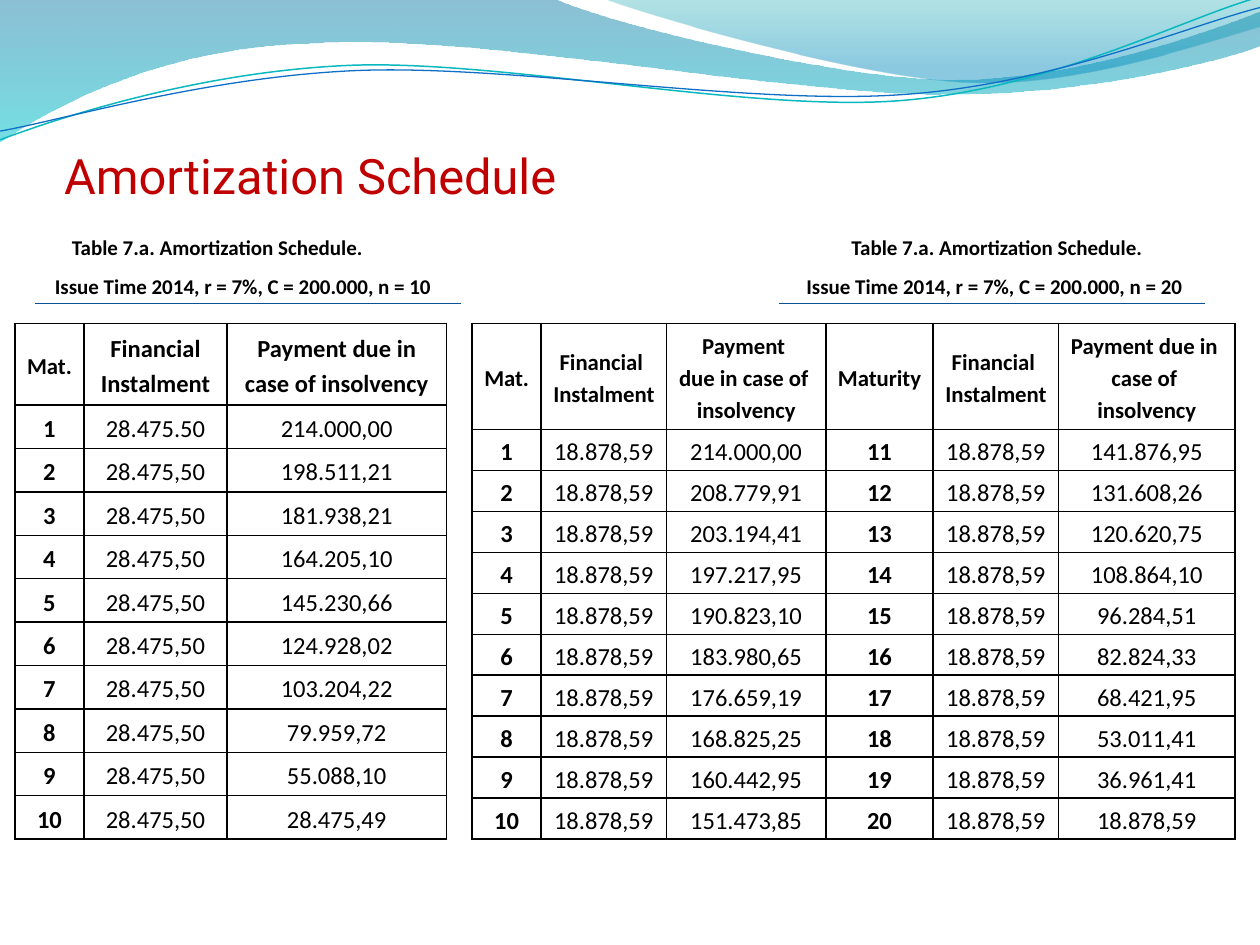
from lxml import etree
from pptx import Presentation
from pptx.dml.color import RGBColor
from pptx.enum.shapes import MSO_CONNECTOR
from pptx.enum.text import MSO_ANCHOR, PP_ALIGN
from pptx.oxml.ns import qn
from pptx.util import Pt

STRAIGHT = MSO_CONNECTOR.STRAIGHT
MIDDLE, BOTTOM = MSO_ANCHOR.MIDDLE, MSO_ANCHOR.BOTTOM
CENTER = PP_ALIGN.CENTER

BLACK = RGBColor(0x00, 0x00, 0x00)
RED = RGBColor(0xC0, 0x00, 0x00)
RULE_BLUE = RGBColor(0x09, 0x52, 0x95)
WAVE_BLUE = RGBColor(0x00, 0x74, 0xA1)
WAVE_CYAN = RGBColor(0x00, 0xC6, 0xCF)
WAVE_TEAL = RGBColor(0x00, 0xA1, 0xA9)
WAVE_SKY = RGBColor(0x00, 0x8B, 0xBF)
LINE_TEAL = RGBColor(0x0A, 0xB8, 0xBF)
LINE_BLUE = RGBColor(0x0F, 0x6F, 0xC6)

# Each wave is a start point, then line ends (x, y) or curves (x1, y1, x2, y2, x, y).
# Filled waves add gradient stops: (position, colour, opacity in percent).
FILLED_WAVES = [
    ([(0, 0), (316.8, -0.7),
      (342.7, 12.2, 478.1, 45.4, 545.8, 45.4), (614.2, 45.4, 689.8, 18.7, 720, 6.5),
      (720.7, 25.9),
      (707.8, 31.7, 626.4, 54.7, 537.1, 54), (447.8, 54, 275, 20.2, 185, 24.5),
      (92.9, 25.9, 33.1, 59.8, -0.7, 81.4)],
     [(0, WAVE_BLUE, 45), (1, WAVE_CYAN, 55)]),
    ([(344.9, -0.7),
      (366.5, 7.9, 491, 44.6, 553.7, 46.8), (616.3, 49.7, 691.9, 23, 720, 15.1),
      (720, 0)],
     [(0, WAVE_TEAL, 30), (0.8, WAVE_SKY, 45)]),
]
LINE_WAVES = [
    ([(0, 79.9), (34.6, 67, 113.8, 41, 199.4, 37.4),
      (284.4, 33.8, 427, 64.1, 513.4, 57.6), (599.8, 51.1, 675.4, 10.8, 718.6, -1.4)],
     LINE_TEAL, 0.85),
    ([(0, 74.9), (33.8, 69.1, 118.1, 43.9, 203.8, 40.3),
      (290.2, 36.7, 429.8, 60.5, 516.2, 54), (601.9, 48.2, 677.5, 15.1, 720, 4.3)],
     LINE_BLUE, 0.75),
]

PAYMENTS_10 = ["214.000,00", "198.511,21", "181.938,21", "164.205,10", "145.230,66",
               "124.928,02", "103.204,22", "79.959,72", "55.088,10", "28.475,49"]
PAYMENTS_20 = ["214.000,00", "208.779,91", "203.194,41", "197.217,95", "190.823,10",
               "183.980,65", "176.659,19", "168.825,25", "160.442,95", "151.473,85",
               "141.876,95", "131.608,26", "120.620,75", "108.864,10", "96.284,51",
               "82.824,33", "68.421,95", "53.011,41", "36.961,41", "18.878,59"]


def add_wave(s, segments, closed):
    """Build a freeform through the segment ends, then bend its curved segments."""
    ends = [(Pt(seg[-2]), Pt(seg[-1])) for seg in segments]
    builder = s.shapes.build_freeform(*ends[0])
    builder.add_line_segments(ends[1:], close=closed)
    sp = builder.convert_to_shape()
    sp.shadow.inherit = False
    sides = list(sp.element.iter(qn("a:lnTo")))
    for side, seg in zip(sides, segments[1:]):
        if len(seg) == 6:
            curve = etree.Element(qn("a:cubicBezTo"))
            for x, y in zip(seg[::2], seg[1::2]):
                etree.SubElement(curve, qn("a:pt"), x=str(Pt(x) - sp.left),
                                 y=str(Pt(y) - sp.top))
            side.getparent().replace(side, curve)
    return sp


def add_header_waves(s):
    for segments, stops in FILLED_WAVES:
        sp = add_wave(s, segments, True)
        sp.line.fill.background()
        sp.fill.gradient()
        sp.fill.gradient_angle = 270
        for stop, (position, color, _) in zip(sp.fill.gradient_stops, stops):
            stop.position = position
            stop.color.rgb = color
        colors = sp.element.spPr.iter(qn("a:srgbClr"))
        for color, (_, _, opacity) in zip(list(colors), stops):
            etree.SubElement(color, qn("a:alpha"), val=str(opacity * 1000))
    for segments, color, width in LINE_WAVES:
        sp = add_wave(s, segments, False)
        sp.fill.background()
        sp.line.color.rgb = color
        sp.line.width = Pt(width)


def style_run(r, size, color=BLACK, name="Calibri", bold=False):
    for key, value in {"size": Pt(size), "name": name, "bold": bold}.items():
        setattr(r.font, key, value)
    r.font.color.rgb = color


def add_text_box(s, box, anchor, margin_left=0, margin_bottom=0):
    tf = s.shapes.add_textbox(*map(Pt, box)).text_frame
    formats = {"word_wrap": True, "vertical_anchor": anchor, "margin_top": 0,
               "margin_right": 0, "margin_left": Pt(margin_left),
               "margin_bottom": Pt(margin_bottom)}
    for key, value in formats.items():
        setattr(tf, key, value)
    return tf


def add_title(s, box, text):
    tf = add_text_box(s, box, BOTTOM, margin_bottom=33.9)
    r = tf.paragraphs[0].add_run()
    r.text = text
    style_run(r, 27.9, RED, "Roboto")


def add_caption_row(s, box, texts, starts):
    """Put two captions on one line, the second at a tab stop."""
    tf = add_text_box(s, box, MIDDLE, margin_left=starts[0] - box[0])
    p = tf.paragraphs[0]
    tabs = etree.SubElement(p._p.get_or_add_pPr(), qn("a:tabLst"))
    etree.SubElement(tabs, qn("a:tab"), pos=str(Pt(starts[1] - starts[0])), algn="l")
    r = p.add_run()
    r.text = "\t".join(texts)
    style_run(r, 12, bold=True)


def add_rule(s, left, right, y):
    line = s.shapes.add_connector(STRAIGHT, Pt(left), Pt(y), Pt(right), Pt(y))
    line.line.color.rgb = RULE_BLUE
    line.line.width = Pt(0.75)
    etree.SubElement(line.element.spPr, qn("a:effectLst"))


def add_borders(cell):
    tcPr = cell._tc.get_or_add_tcPr()
    for i, side in enumerate(("lnL", "lnR", "lnT", "lnB")):
        ln = etree.Element(qn(f"a:{side}"), w=str(Pt(1)))
        fill = etree.SubElement(ln, qn("a:solidFill"))
        etree.SubElement(fill, qn("a:srgbClr"), val=str(BLACK))
        tcPr.insert(i, ln)


def fill_cell(cell, text, size, bold):
    formats = {"vertical_anchor": MIDDLE, "margin_left": Pt(5), "margin_right": Pt(5),
               "margin_top": 0, "margin_bottom": 0}
    for key, value in formats.items():
        setattr(cell, key, value)
    cell.fill.background()
    add_borders(cell)
    cell.text_frame.text = text
    for p in cell.text_frame.paragraphs:
        p.alignment = CENTER
        p.line_spacing = 1.15
        style_run(p.runs[0], size, bold=bold)


def add_schedule(s, box, widths, header_height, header_sizes, rows):
    """Draw a table whose first row is the header and every third column is bold."""
    frame = s.shapes.add_table(len(rows), len(widths), *map(Pt, box))
    table = frame.table
    table.first_row = table.horz_banding = False
    for column, width in zip(table.columns, widths):
        column.width = Pt(width)
    body_height = (box[3] - header_height) / (len(rows) - 1)
    for i, values in enumerate(rows):
        table.rows[i].height = Pt(body_height if i else header_height)
        for j, text in enumerate(values):
            size = 14 if i else header_sizes[j]
            fill_cell(table.cell(i, j), text, size, i == 0 or j % 3 == 0)


def main():
    prs = Presentation()
    prs.slide_width, prs.slide_height = Pt(720), Pt(540)
    s = prs.slides.add_slide(prs.slide_layouts[6])

    add_header_waves(s)
    add_title(s, (36.7, 60.5, 648, 90), "Amortization Schedule")
    add_caption_row(s, (31, 130.2, 655, 22), ["Table 7.a. Amortization Schedule."] * 2,
                    (41.1, 486.5))
    add_caption_row(s, (0, 152.8, 689, 21.6),
                    [f"Issue Time 2014, r = 7%, C = 200.000, n = {n}" for n in (10, 20)],
                    (31.4, 460.8))
    for left in (20, 445):
        add_rule(s, left, left + 243.5, 173.5)

    rows_10 = [["Mat.", "Financial Instalment", "Payment due in case of insolvency"]]
    rows_10 += [[str(n), "28.475,50", due] for n, due in enumerate(PAYMENTS_10, 1)]
    rows_10[1][1] = "28.475.50"
    add_schedule(s, (8.5, 184.8, 246.6, 294.8), [39.5, 81.8, 125.3], 46.7,
                 [13, 14, 14], rows_10)

    instalment = "Financial \nInstalment"
    rows_20 = [["Mat.", instalment, "Payment \ndue in case of \ninsolvency",
                "Maturity", instalment, "Payment due in \ncase of \ninsolvency"]]
    for n in range(1, 11):
        rows_20.append([text for m in (n, n + 10)
                        for text in (str(m), "18.878,59", PAYMENTS_20[m - 1])])
    add_schedule(s, (269.8, 184.8, 436, 294.8), [39.4, 71.7, 91.1, 61.3, 71.7, 100.8],
                 60.6, [13] * 6, rows_20)

    prs.save("out.pptx")


if __name__ == "__main__":
    main()
